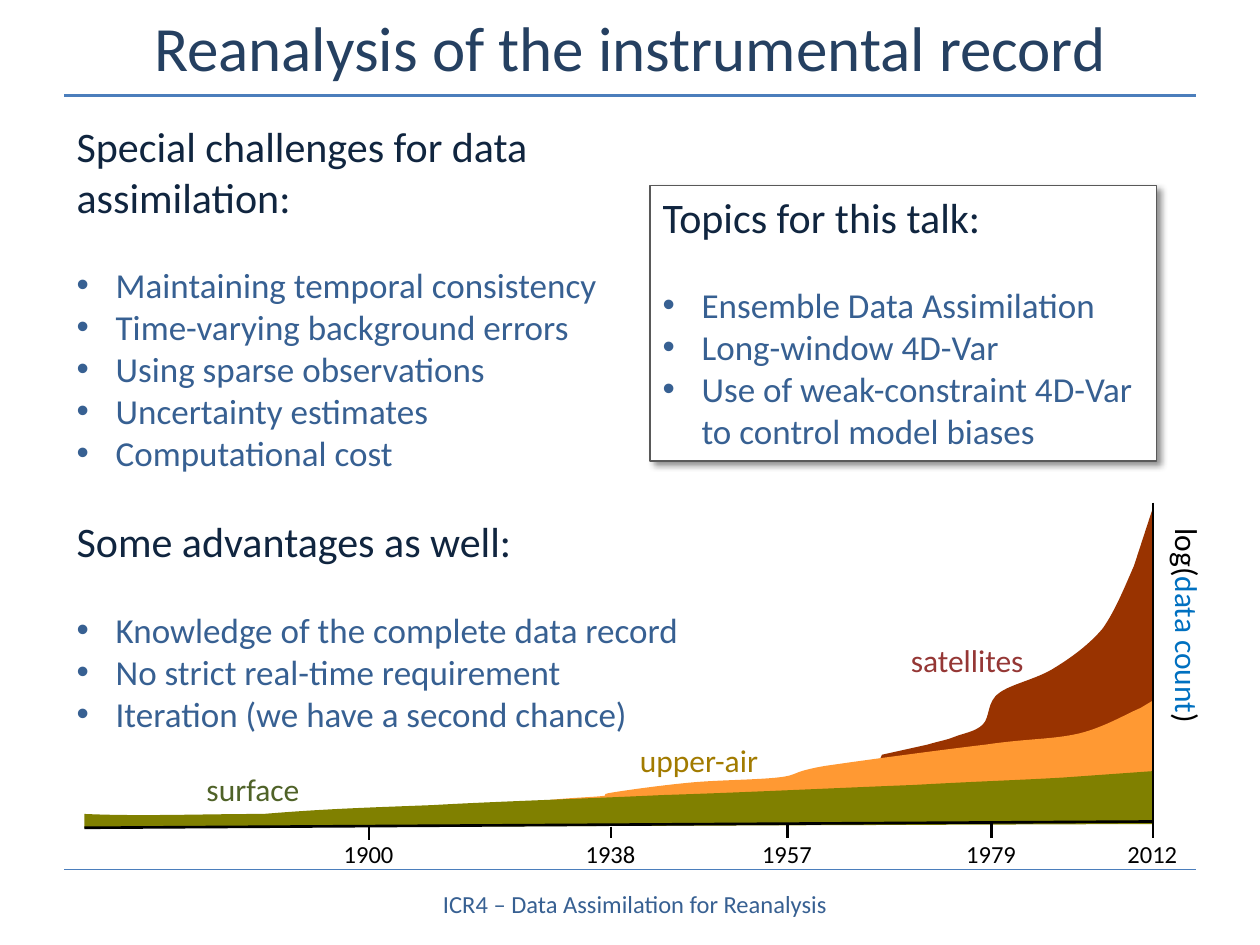
from dataclasses import dataclass

from lxml import etree
from pptx import Presentation
from pptx.dml.color import RGBColor
from pptx.enum.shapes import MSO_CONNECTOR, MSO_SHAPE
from pptx.enum.text import MSO_ANCHOR, PP_ALIGN
from pptx.oxml.ns import qn
from pptx.util import Pt

LINE, RECT = MSO_CONNECTOR.STRAIGHT, MSO_SHAPE.RECTANGLE
TOP, MID = MSO_ANCHOR.TOP, MSO_ANCHOR.MIDDLE
LEFT, MID_TEXT = PP_ALIGN.LEFT, PP_ALIGN.CENTER
SCALE = 9144  # EMU per px, 100 px to the inch


@dataclass(frozen=True)
class Theme:
    font: str = "Calibri"
    title: str = "254061"
    head: str = "10253F"
    body: str = "376092"
    rule: str = "4B7EBC"
    edge: str = "595959"
    ink: str = "000000"
    paper: str = "FFFFFF"
    count: str = "0070C0"
    sat: str = "993300"
    air: str = "FF9933"
    land: str = "808000"
    sat_text: str = "953735"
    air_text: str = "A27B00"
    land_text: str = "4F6228"
    title_size: int = 36
    head_size: int = 24
    body_size: int = 20
    label_size: int = 18
    small_size: int = 14
    gap: int = 24


T = Theme()

# Areas: start point, then lines (one point) and curves (three points)
SAT = [[(698, 652)], [(699, 643), (694, 609), (700, 599)], [(736, 591)],
       [(746, 588), (749, 588), (757, 585)], [(764, 582), (774, 581), (780, 575)],
       [(786, 569), (783, 557), (793, 550)], [(802, 543), (823, 539), (837, 530)],
       [(850, 522), (864, 512), (875, 499)], [(885, 485), (893, 465), (900, 449)],
       [(915, 403)], [(914, 649)]]
AIR = [[(419, 655)], [(337, 653), (411, 642), (420, 638)],
       [(430, 634), (465, 633), (476, 632)], [(487, 631), (473, 631), (486, 629)],
       [(498, 627), (527, 623), (549, 621)], [(571, 619), (600, 619), (618, 617)],
       [(635, 615), (626, 613), (654, 608)], [(681, 604), (748, 595), (782, 591)],
       [(816, 586), (836, 587), (857, 582)], [(877, 577), (895, 566), (905, 562)],
       [(915, 556)], [(914, 650)]]
LAND = [[(67, 657)], [(67, 646)], [(112, 648), (161, 646), (209, 646)],
        [(257, 642), (290, 641), (343, 639)], [(395, 636), (463, 634), (526, 631)],
        [(590, 629), (672, 625), (725, 623)], [(778, 620), (813, 619), (845, 617)],
        [(915, 612)], [(915, 654)]]

# Year, tick x, tick top, tick bottom
TICKS = [("1900", 293, 656, 667), ("1938", 485, 656, 665), ("1957", 625, 653, 665),
         ("1979", 787, 652, 665), ("2012", 915, 399, 665)]

TASKS = [("Special challenges for data assimilation:",
          ["Maintaining temporal consistency", "Time-varying background errors",
           "Using sparse observations", "Uncertainty estimates", "Computational cost"]),
         ("Some advantages as well:",
          ["Knowledge of the complete data record", "No strict real-time requirement",
           "Iteration (we have a second chance)"])]
TOPICS = [("Topics for this talk:",
           ["Ensemble Data Assimilation", "Long-window 4D-Var",
            "Use of weak-constraint 4D-Var to control model biases"])]


def px(*vals):
    return [val * SCALE for val in vals]


def rgb(code):
    return RGBColor.from_string(code)


def assign(item, vals):
    for key, val in vals.items():
        setattr(item, key, val)


def add_run(para, text, size, color):
    run = para.add_run()
    run.text = text
    assign(run.font, {"name": T.font, "size": Pt(size)})
    run.font.color.rgb = rgb(color)


def add_text(slide, box, runs, size, align=LEFT, wrap=False, turn=0):
    """One line of text; runs are (text, colour) pairs."""
    shape = slide.shapes.add_textbox(*px(*box))
    shape.rotation = turn
    assign(shape.text_frame, {"word_wrap": wrap, "vertical_anchor": MID if wrap else TOP})
    para = shape.text_frame.paragraphs[0]
    para.alignment = align
    for text, color in runs:
        add_run(para, text, size, color)


def add_bullet(para):
    props = para._p.get_or_add_pPr()
    indent = px(31)[0]
    props.set("marL", str(indent))
    props.set("indent", str(-indent))
    etree.SubElement(props, qn("a:buFont")).set("typeface", "Arial")
    etree.SubElement(props, qn("a:buChar")).set("char", "•")


def fill_list(frame, groups):
    """Headings, each followed by its bullets."""
    assign(frame, {"word_wrap": True, "vertical_anchor": TOP})
    para = frame.paragraphs[0]
    for n, (head, items) in enumerate(groups):
        if n:
            para = frame.add_paragraph()
            para.space_before = Pt(T.gap)
        assign(para, {"alignment": LEFT, "space_after": Pt(T.gap)})
        add_run(para, head, T.head_size, T.head)
        for item in items:
            para = frame.add_paragraph()
            para.alignment = LEFT
            add_bullet(para)
            add_run(para, item, T.body_size, T.body)


def add_line(slide, ends, color, width):
    line = slide.shapes.add_connector(LINE, *px(*ends))
    line.line.color.rgb = rgb(color)
    line.line.width = Pt(width)
    etree.SubElement(line._element.spPr, qn("a:effectLst"))


def bend(area, parts):
    """Join the lines of each three-point part into one curve."""
    lines = iter(list(area._element.iter(qn("a:lnTo"))))
    for part in parts:
        steps = [next(lines) for _ in part]
        if len(steps) == 3:
            curve = etree.Element(qn("a:cubicBezTo"))
            steps[0].addprevious(curve)
            for step in steps:
                curve.append(step[0])
                step.getparent().remove(step)


def add_area(slide, parts, color):
    pts = [px(*pt) for part in parts for pt in part]
    pen = slide.shapes.build_freeform(*pts[0], scale=1.0)
    pen.add_line_segments(pts[1:], close=False)
    area = pen.convert_to_shape()
    bend(area, parts[1:])
    area.shadow.inherit = False
    area.fill.solid()
    area.fill.fore_color.rgb = rgb(color)
    area.line.fill.background()


def add_card(slide, box, groups):
    card = slide.shapes.add_shape(RECT, *px(*box))
    card.shadow.inherit = False
    card.fill.solid()
    card.fill.fore_color.rgb = rgb(T.paper)
    card.line.color.rgb = rgb(T.edge)
    card.line.width = Pt(0.75)
    # Soft shadow to the lower right
    effects = card._element.spPr.find(qn("a:effectLst"))
    shade = etree.SubElement(effects, qn("a:outerShdw"), blurRad=str(Pt(4)),
                             dist=str(Pt(3)), dir="2700000", algn="tl", rotWithShape="0")
    tone = etree.SubElement(shade, qn("a:srgbClr"), val=T.ink)
    etree.SubElement(tone, qn("a:alpha"), val="43000")
    fill_list(card.text_frame, groups)


def add_graph(slide):
    for parts, color in ((SAT, T.sat), (AIR, T.air), (LAND, T.land)):
        add_area(slide, parts, color)
    # Axes and years
    add_line(slide, (67, 657, 915, 652), T.ink, 1.5)
    for year, x, top, end in TICKS:
        add_line(slide, (x, top, x, end), T.ink, 1.5)
        add_text(slide, (x - 30, 661, 60, 34), [(year, T.ink)], T.small_size)
    # Names of the areas
    for name, color, box in (("surface", T.land_text, (154, 606, 95, 40)),
                             ("upper-air", T.air_text, (498, 583, 116, 40)),
                             ("satellites", T.sat_text, (713, 504, 111, 40))):
        add_text(slide, box, [(name, color)], T.label_size)
    add_text(slide, (853, 479, 179, 40),
             [("log(", T.ink), ("data count", T.count), (")", T.ink)], T.label_size, turn=90)


def main():
    deck = Presentation()
    deck.slide_width, deck.slide_height = px(1000, 750)
    slide = deck.slides.add_slide(deck.slide_layouts[6])
    # Title, footer and their rules
    add_line(slide, (51, 690, 949, 690), T.rule, 0.75)
    add_line(slide, (51, 76, 949, 76), T.rule, 1.5)
    add_text(slide, (50, 0, 900, 74), [("Reanalysis of the instrumental record", T.title)],
             T.title_size, MID_TEXT, True)
    add_text(slide, (311, 697, 386, 40), [("ICR4 – Data Assimilation for Reanalysis", T.body)],
             T.small_size, MID_TEXT, True)
    # Content
    add_graph(slide)
    notes = slide.shapes.add_textbox(*px(51, 91, 535, 562))
    fill_list(notes.text_frame, TASKS)
    add_card(slide, (516, 147, 402, 219), TOPICS)
    deck.save("out.pptx")


if __name__ == "__main__":
    main()
